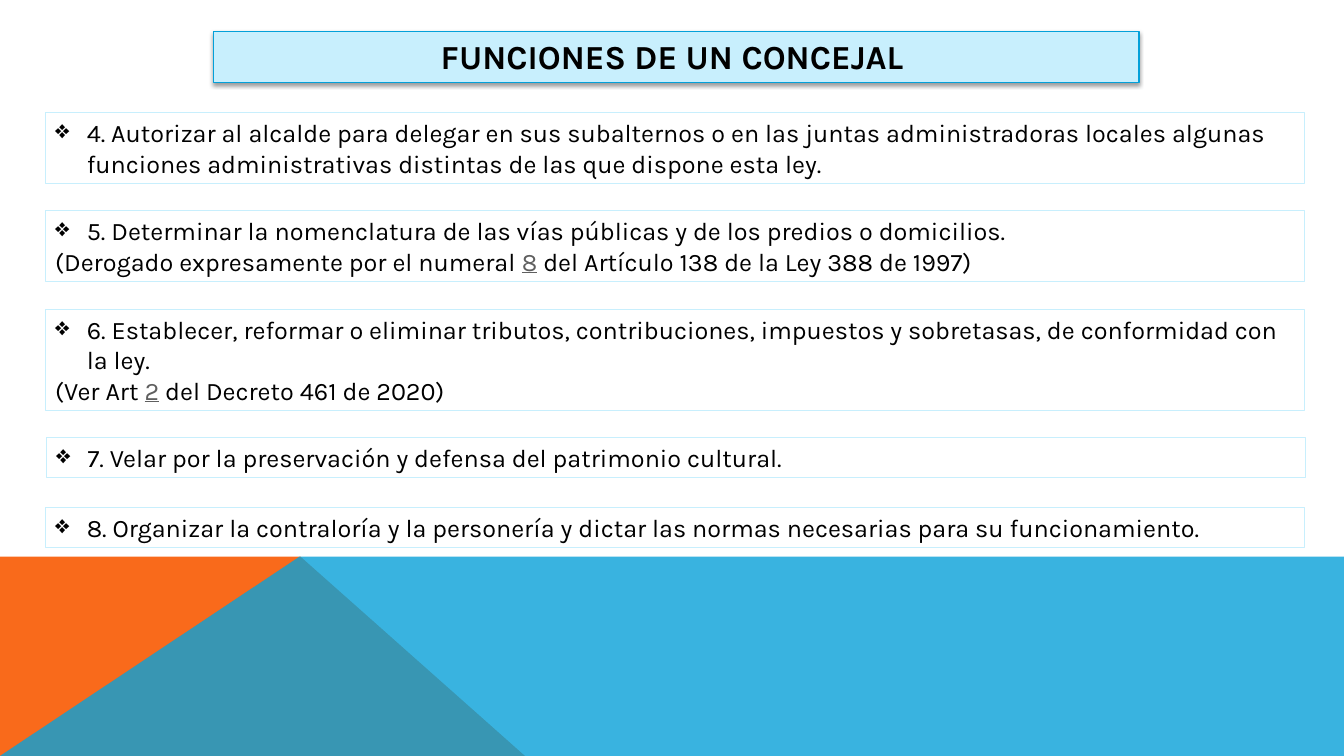
from lxml import etree
from pptx import Presentation
from pptx.dml.color import RGBColor
from pptx.enum.shapes import MSO_SHAPE
from pptx.enum.text import MSO_ANCHOR, MSO_AUTO_SIZE, PP_ALIGN
from pptx.oxml.ns import qn
from pptx.util import Pt

WIDTH, HEIGHT = 960, 540
FONT = "Karla"
BLACK, GREY = "000000", "5F5F5F"
PALE_BLUE, BLUE, SKY, ORANGE = "C8EFFD", "03A0D9", "08A1D9", "F96A1B"

TITLE = "FUNCIONES DE UN CONCEJAL "
# left, top, number of text lines, bulleted text, note as (before, reference, after)
DUTIES = [
    (32.4, 80.6, 2, "4. Autorizar al alcalde para delegar en sus subalternos o en las juntas "
     "administradoras locales algunas funciones administrativas distintas de las que "
     "dispone esta ley.", None),
    (32.4, 150.5, 2, "5. Determinar la nomenclatura de las vías públicas y de los predios "
     "o domicilios.",
     ("(Derogado expresamente por el numeral ", "8", " del Artículo 138 de la Ley 388 de 1997)")),
    (32.4, 221, 3, "6. Establecer, reformar o eliminar tributos, contribuciones, impuestos "
     "y sobretasas, de conformidad con la ley.",
     ("(Ver Art ", "2", " del Decreto 461 de 2020)")),
    (33, 312.4, 1, "7. Velar por la preservación y defensa del patrimonio cultural.", None),
    (32.4, 362.2, 1, "8. Organizar la contraloría y la personería y dictar las normas "
     "necesarias para su funcionamiento.", None),
]
DUTY_WIDTH, LINE_HEIGHT, INSETS = 899.5, 21.8, 7.2

BAND_TOP = 397.6
ORANGE_BAND = [(0, HEIGHT), (0, BAND_TOP), (214.6, BAND_TOP), (375, HEIGHT)]
BLUE_BAND = [(0, HEIGHT), (214, BAND_TOP), (WIDTH, BAND_TOP), (WIDTH, HEIGHT)]


def rgb(color):
    return RGBColor.from_string(color)


def add_xml(parent, tag, **attributes):
    return etree.SubElement(parent, qn(tag), attributes)


def add_band(slide, points, color):
    corners = [(Pt(x), Pt(y)) for x, y in points]
    builder = slide.shapes.build_freeform(*corners[0])
    builder.add_line_segments(corners[1:], close=True)
    shape = builder.convert_to_shape()
    shape.shadow.inherit = False
    shape.fill.solid()
    shape.fill.fore_color.rgb = rgb(color)
    shape.line.fill.background()
    return shape


def add_box(slide, left, top, width, height, line_color):
    shape = slide.shapes.add_shape(
        MSO_SHAPE.RECTANGLE, Pt(left), Pt(top), Pt(width), Pt(height))
    shape.shadow.inherit = False
    shape.fill.background()
    shape.line.color.rgb = rgb(line_color)
    shape.line.width = Pt(0.75)
    frame = shape.text_frame
    frame.word_wrap = True
    frame.auto_size = MSO_AUTO_SIZE.SHAPE_TO_FIT_TEXT
    frame.vertical_anchor = MSO_ANCHOR.TOP
    frame.paragraphs[0].alignment = PP_ALIGN.LEFT
    return shape


def add_run(paragraph, text, size=18, color=BLACK, bold=False, underline=False):
    run = paragraph.add_run()
    run.text = text
    font = run.font
    font.name, font.size, font.bold = FONT, Pt(size), bold
    font.underline = underline
    font.color.rgb = rgb(color)


def add_bullet(paragraph):
    properties = paragraph._p.get_or_add_pPr()
    properties.set("marL", str(Pt(22.5)))
    properties.set("indent", str(-Pt(22.5)))
    add_xml(properties, "a:buChar", char="❖")


def add_title(slide):
    shape = add_box(slide, 152.6, 22.3, 661, 36.4, BLUE)
    shape.fill.solid()
    shape.fill.fore_color.rgb = rgb(PALE_BLUE)
    effects = shape._element.spPr.find(qn("a:effectLst"))
    shadow = add_xml(effects, "a:outerShdw", blurRad=str(Pt(3.1)), dist=str(Pt(1.6)),
                     dir="5400000", rotWithShape="0")
    add_xml(add_xml(shadow, "a:srgbClr", val=BLACK), "a:alpha", val="38000")
    paragraph = shape.text_frame.paragraphs[0]
    paragraph.alignment = PP_ALIGN.CENTER
    add_run(paragraph, TITLE, size=24, bold=True)


def add_duty(slide, left, top, lines, text, note):
    height = INSETS + lines * LINE_HEIGHT
    frame = add_box(slide, left, top, DUTY_WIDTH, height, PALE_BLUE).text_frame
    add_bullet(frame.paragraphs[0])
    add_run(frame.paragraphs[0], text)
    if note:
        before, reference, after = note
        paragraph = frame.add_paragraph()
        paragraph.alignment = PP_ALIGN.LEFT
        add_run(paragraph, before)
        add_run(paragraph, reference, color=GREY, underline=True)
        add_run(paragraph, after)


def main():
    presentation = Presentation()
    presentation.slide_width, presentation.slide_height = Pt(WIDTH), Pt(HEIGHT)
    slide = presentation.slides.add_slide(presentation.slide_layouts[6])
    add_band(slide, ORANGE_BAND, ORANGE)
    blue_band = add_band(slide, BLUE_BAND, SKY)
    blue_fill = blue_band._element.spPr.find(qn("a:solidFill"))
    add_xml(blue_fill[0], "a:alpha", val="80000")
    add_title(slide)
    for duty in DUTIES:
        add_duty(slide, *duty)
    presentation.save("out.pptx")


if __name__ == "__main__":
    main()
